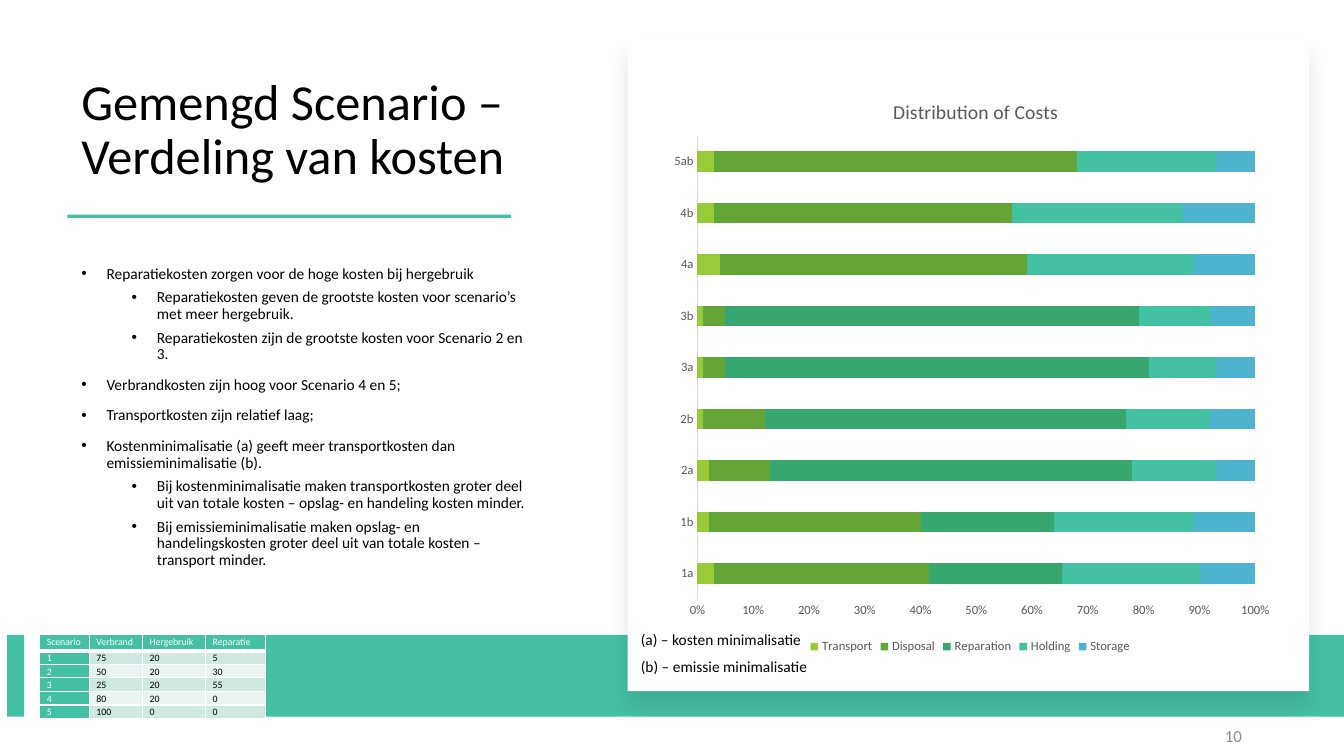
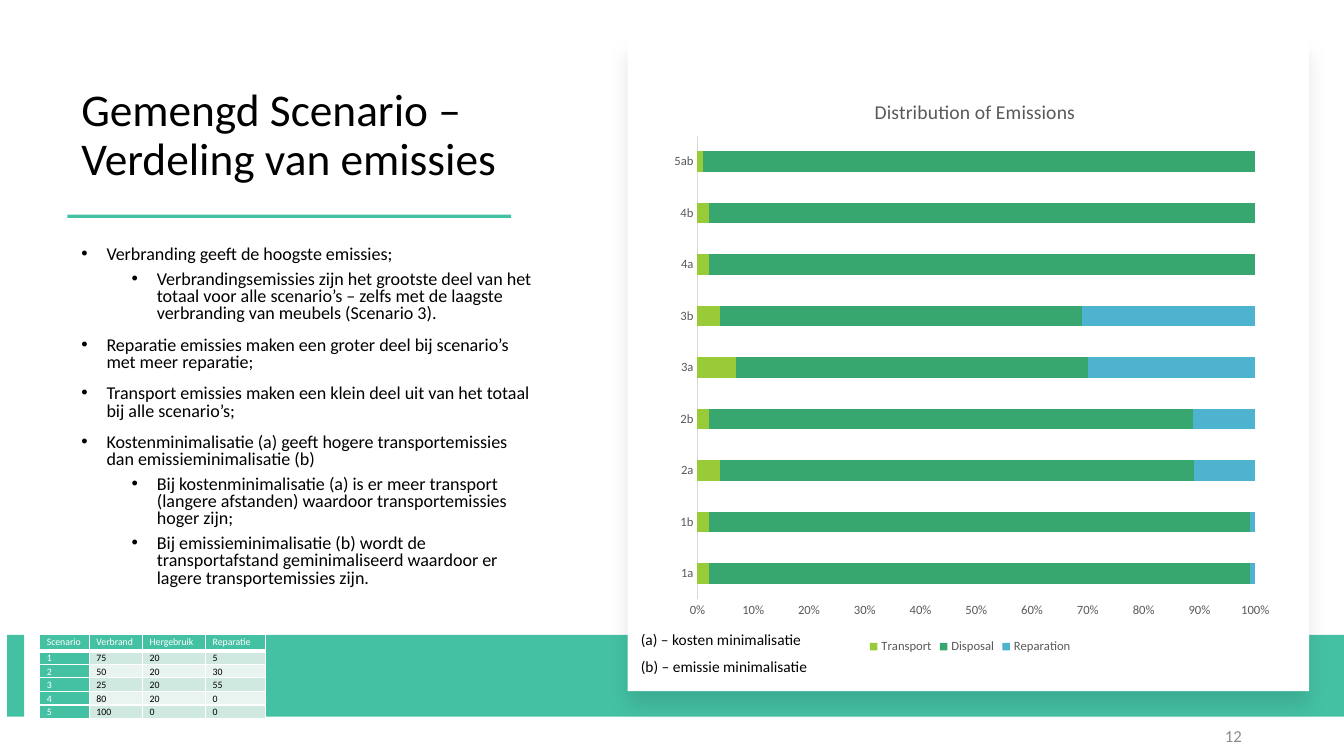
from lxml import etree
from pptx import Presentation
from pptx import util as u
from pptx.chart.data import CategoryChartData
from pptx.dml.color import RGBColor
from pptx.enum import chart as charts, shapes, text
from pptx.oxml import parse_xml
from pptx.oxml.ns import nsdecls, qn

Cm, Pt = u.Cm, u.Pt


class Theme:
    font = "Calibri"
    black = RGBColor(0x00, 0x00, 0x00)
    white = RGBColor(0xFF, 0xFF, 0xFF)
    teal = RGBColor(0x44, 0xC1, 0xA3)
    lime = RGBColor(0x99, 0xCB, 0x38)
    grass = RGBColor(0x63, 0xA5, 0x37)
    green = RGBColor(0x37, 0xA7, 0x6F)
    blue = RGBColor(0x4E, 0xB3, 0xCF)
    chart_text = RGBColor(0x59, 0x59, 0x59)
    axis_line = RGBColor(0xD9, 0xD9, 0xD9)
    page_number = RGBColor(0x8C, 0x8C, 0x8C)
    row_fills = (RGBColor(0xE9, 0xF4, 0xF0), RGBColor(0xCF, 0xE9, 0xE0))
    caption_size, page_size, table_size = 11, 12, 7
    chart_title_size, chart_size = 14, 9


CATEGORIES = ["1a", "1b", "2a", "2b", "3a", "3b", "4a", "4b", "5ab"]

SCENARIOS = [
    ("Scenario", "Verbrand", "Hergebruik", "Reparatie"),
    ("1", "75", "20", "5"),
    ("2", "50", "20", "30"),
    ("3", "25", "20", "55"),
    ("4", "80", "20", "0"),
    ("5", "100", "0", "0"),
]
COLUMN_WIDTHS = (1.25, 1.34, 1.59, 1.52)

CAPTION = ["(a) – kosten minimalisatie", "(b) – emissie minimalisatie"]

# Bullets are (level, text); series are (name, colour, values).
SLIDES = [
    dict(
        number="10", title="Gemengd Scenario – Verdeling van kosten", title_size=36,
        body_size=11, line_spacing=0.9,
        bullets=[
            (0, "Reparatiekosten zorgen voor de hoge kosten bij hergebruik"),
            (1, "Reparatiekosten geven de grootste kosten voor scenario’s met meer hergebruik."),
            (1, "Reparatiekosten zijn de grootste kosten voor Scenario 2 en 3."),
            (0, "Verbrandkosten zijn hoog voor Scenario 4 en 5;"),
            (0, "Transportkosten zijn relatief laag;"),
            (0, "Kostenminimalisatie (a) geeft meer transportkosten dan "
                "emissieminimalisatie (b)."),
            (1, "Bij kostenminimalisatie maken transportkosten groter deel uit van "
                "totale kosten – opslag- en handeling kosten minder."),
            (1, "Bij emissieminimalisatie maken opslag- en handelingskosten groter deel "
                "uit van totale kosten – transport minder."),
        ],
        chart_title="Distribution of Costs", chart_title_x=0.37,
        series=[
            ("Transport", Theme.lime, (3, 2, 2, 1, 1, 1, 4, 3, 3)),
            ("Disposal", Theme.grass, (39, 38, 11, 11, 4, 4, 55, 54, 65)),
            ("Reparation", Theme.green, (24, 24, 65, 64, 76, 75, 0, 0, 0)),
            ("Holding", Theme.teal, (25, 25, 15, 15, 12, 13, 30, 31, 25)),
            ("Storage", Theme.blue, (10, 11, 7, 8, 7, 8, 11, 13, 7)),
        ],
    ),
    dict(
        number="12", title="Gemengd Scenario – Verdeling van emissies", title_size=32.4,
        body_size=12.9, line_spacing=0.8,
        bullets=[
            (0, "Verbranding geeft de hoogste emissies;"),
            (1, "Verbrandingsemissies zijn het grootste deel van het totaal voor alle "
                "scenario’s – zelfs met de laagste verbranding van meubels (Scenario 3)."),
            (0, "Reparatie emissies maken een groter deel bij scenario’s met meer reparatie;"),
            (0, "Transport emissies maken een klein deel uit van het totaal bij alle "
                "scenario’s;"),
            (0, "Kostenminimalisatie (a) geeft hogere transportemissies dan "
                "emissieminimalisatie (b)"),
            (1, "Bij kostenminimalisatie (a) is er meer transport (langere afstanden) "
                "waardoor transportemissies hoger zijn;"),
            (1, "Bij emissieminimalisatie (b) wordt de transportafstand geminimaliseerd "
                "waardoor er lagere transportemissies zijn."),
        ],
        chart_title="Distribution of Emissions", chart_title_x=0.34,
        series=[
            ("Transport", Theme.lime, (2, 2, 4, 2, 7, 4, 2, 2, 1)),
            ("Disposal", Theme.green, (96, 97, 85, 86, 63, 65, 98, 98, 99)),
            ("Reparation", Theme.blue, (1, 1, 11, 11, 30, 31, 0, 0, 0)),
        ],
    ),
]


def style_font(font, size, color):
    font.name, font.size, font.bold = Theme.font, Pt(size), False
    font.color.rgb = color


def add_text(slide, box, lines, size, color=Theme.black, anchor=text.MSO_ANCHOR.TOP,
             align=text.PP_ALIGN.LEFT, line_spacing=1.0, space_after=0, bulleted=False):
    """Add a wrapping text box; bulleted lines are (level, text) pairs."""
    frame = slide.shapes.add_textbox(*map(Cm, box)).text_frame
    frame.word_wrap, frame.vertical_anchor = True, anchor
    for index, line in enumerate(lines):
        paragraph = frame.paragraphs[0] if index == 0 else frame.add_paragraph()
        paragraph.alignment, paragraph.line_spacing = align, line_spacing
        paragraph.space_after = Pt(space_after)
        if bulleted:
            level, line = line
            paragraph.level = level
            paragraph.space_before = Pt(5 if level else 10)
            properties = paragraph._p.get_or_add_pPr()
            properties.set("marL", str(u.Inches(0.75 if level else 0.25)))
            properties.set("indent", str(u.Inches(-0.25)))
            etree.SubElement(properties, qn("a:buFont"), typeface="Arial")
            etree.SubElement(properties, qn("a:buChar"), char="•")
        paragraph.add_run().text = line
        style_font(paragraph.font, size, color)


presentation = Presentation()
presentation.slide_width, presentation.slide_height = Cm(33.87), Cm(19.05)

for content in SLIDES:
    slide = presentation.slides.add_slide(presentation.slide_layouts[6])

    # Title, rule and bullets on the left
    add_text(slide, (1.8, 1.47, 11.89, 3.33), [content["title"]], content["title_size"],
             anchor=text.MSO_ANCHOR.BOTTOM, line_spacing=0.9)
    add_text(slide, (1.8, 5.64, 11.89, 9.75), content["bullets"], content["body_size"],
             anchor=text.MSO_ANCHOR.MIDDLE, line_spacing=content["line_spacing"],
             bulleted=True)

    # Rule, bottom bands and the raised chart panel
    for box, color in [
        ((1.7, 5.41, 11.18, 0.08), Theme.teal),
        ((0.18, 16, 0.43, 2.06), Theme.teal),
        ((1, 16, 32.87, 2.06), Theme.teal),
        ((15.82, 0.99, 17.17, 16.43), Theme.white),
    ]:
        panel = slide.shapes.add_shape(shapes.MSO_SHAPE.RECTANGLE, *map(Cm, box))
        panel.shadow.inherit = False
        panel.fill.solid()
        panel.fill.fore_color.rgb = color
        panel.line.fill.background()
    panel._element.spPr.find(qn("a:effectLst")).append(parse_xml(
        f'<a:outerShdw {nsdecls("a")} blurRad="{Pt(15)}" dist="{Pt(11)}" dir="5400000" '
        'algn="t" rotWithShape="0"><a:srgbClr val="000000"><a:alpha val="10000"/>'
        '</a:srgbClr></a:outerShdw>'))

    add_text(slide, (23.93, 18.03, 7.62, 1.02), [content["number"]], Theme.page_size,
             Theme.page_number, text.MSO_ANCHOR.MIDDLE, text.PP_ALIGN.RIGHT, space_after=6)

    # Distribution chart
    chart_data = CategoryChartData()
    chart_data.categories = CATEGORIES
    for name, color, values in content["series"]:
        chart_data.add_series(name, values)
    chart = slide.shapes.add_chart(
        charts.XL_CHART_TYPE.BAR_STACKED_100,
        *map(Cm, (16.64, 1.8, 15.62, 14.78)), chart_data).chart
    style_font(chart.font, Theme.chart_size, Theme.chart_text)

    chart.has_title = True
    paragraph = chart.chart_title.text_frame.paragraphs[0]
    paragraph.add_run().text = content["chart_title"]
    style_font(paragraph.font, Theme.chart_title_size, Theme.chart_text)

    chart.has_legend = True
    chart.legend.position = charts.XL_LEGEND_POSITION.BOTTOM
    chart.legend.include_in_layout = False
    style_font(chart.legend.font, Theme.chart_size, Theme.chart_text)

    plot = chart.plots[0]
    plot.gap_width, plot.overlap, plot.vary_by_categories = 150, 100, False
    for series, (name, color, values) in zip(plot.series, content["series"]):
        series.invert_if_negative = False
        series.format.fill.solid()
        series.format.fill.fore_color.rgb = color

    for axis in (chart.category_axis, chart.value_axis):
        axis.has_major_gridlines = False
        axis.major_tick_mark = axis.minor_tick_mark = charts.XL_TICK_MARK.NONE
        style_font(axis.tick_labels.font, Theme.chart_size, Theme.chart_text)
    chart.category_axis.format.line.color.rgb = Theme.axis_line
    chart.category_axis.format.line.width = Pt(0.75)
    chart.value_axis.format.line.fill.background()
    chart.value_axis.tick_labels.number_format = "0%"
    chart.value_axis.tick_labels.number_format_is_linked = False

    # Fixed places, as fractions of the chart, for the title and the plot
    plot_area = chart._chartSpace.chart.plotArea
    for element, index, settings in [
        (chart.chart_title._element, 1,
         dict(xMode="edge", yMode="edge", x=content["chart_title_x"], y=0.04)),
        (plot_area, 0,
         dict(layoutTarget="inner", xMode="edge", yMode="edge",
              x=0.06, y=0.11, w=0.9, h=0.79)),
    ]:
        for layout in element.findall(qn("c:layout")):
            element.remove(layout)
        layout = etree.Element(qn("c:layout"))
        manual = etree.SubElement(layout, qn("c:manualLayout"))
        for tag, value in settings.items():
            etree.SubElement(manual, qn(f"c:{tag}"), val=str(value))
        element.insert(index, layout)

    # Scenario table
    table = slide.shapes.add_table(
        len(SCENARIOS), len(COLUMN_WIDTHS),
        *map(Cm, (1, 15.98, sum(COLUMN_WIDTHS), 2.12))).table
    for column, width in zip(table.columns, COLUMN_WIDTHS):
        column.width = Cm(width)
    for row_index, values in enumerate(SCENARIOS):
        table.rows[row_index].height = Cm(0.34 if row_index else 0.42)
        for column_index, value in enumerate(values):
            cell = table.cell(row_index, column_index)
            is_heading = row_index == 0 or column_index == 0
            cell.margin_left = cell.margin_right = Cm(0.18)
            cell.margin_top = cell.margin_bottom = 0
            for side in "LRTB":
                width = Pt(3 if row_index == 0 and side == "B" else 1)
                cell._tc.get_or_add_tcPr().append(parse_xml(
                    f'<a:ln{side} {nsdecls("a")} w="{width}"><a:solidFill>'
                    f'<a:srgbClr val="{Theme.white}"/></a:solidFill></a:ln{side}>'))
            cell.fill.solid()
            cell.fill.fore_color.rgb = (
                Theme.teal if is_heading else Theme.row_fills[row_index % 2])
            paragraph = cell.text_frame.paragraphs[0]
            paragraph.alignment = text.PP_ALIGN.JUSTIFY
            paragraph.line_spacing = 1.15
            paragraph.add_run().text = value
            style_font(paragraph.font, Theme.table_size,
                       Theme.white if is_heading else Theme.black)

    add_text(slide, (15.9, 15.75, 13.84, 1.96), CAPTION, Theme.caption_size, space_after=6)

presentation.save("out.pptx")
